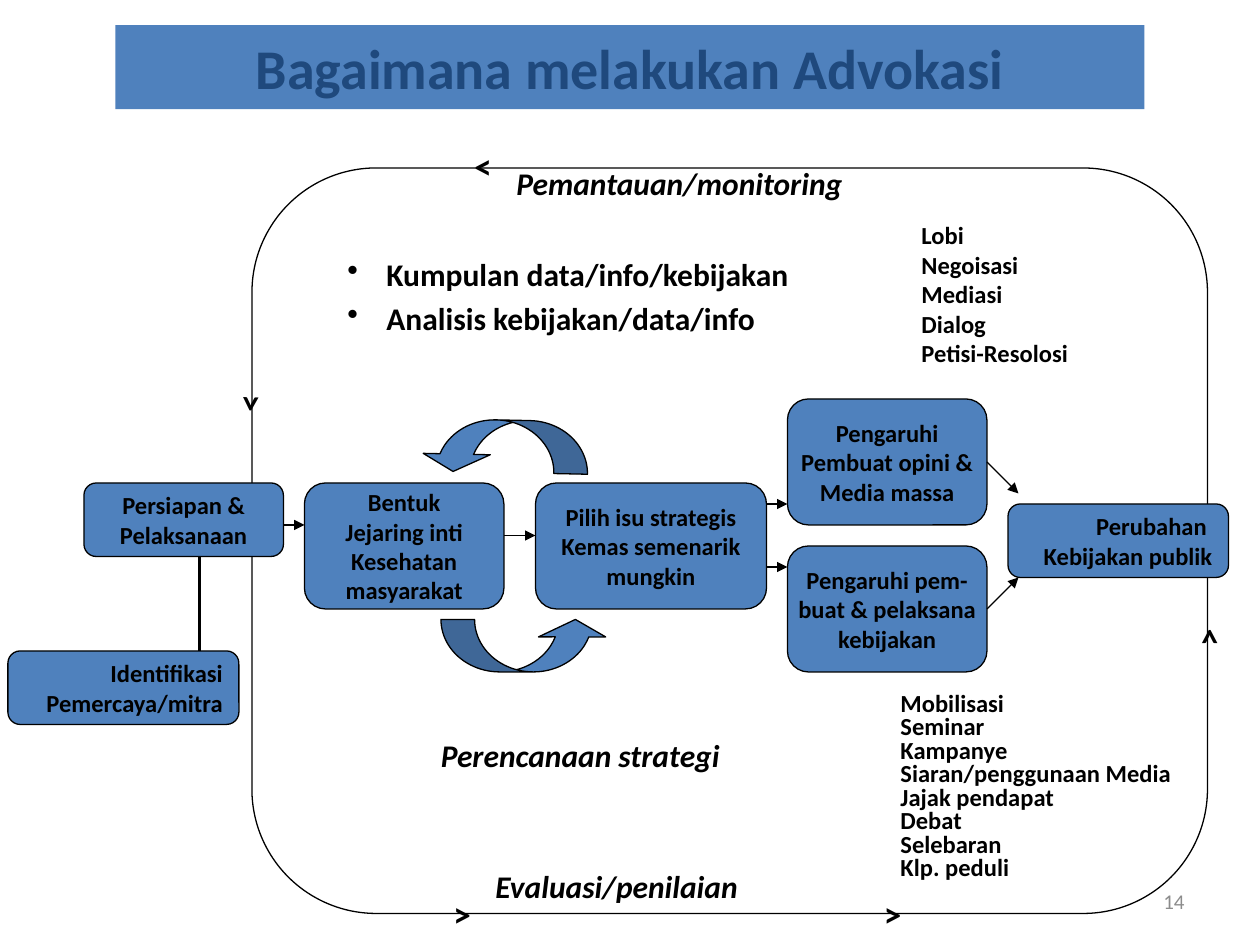
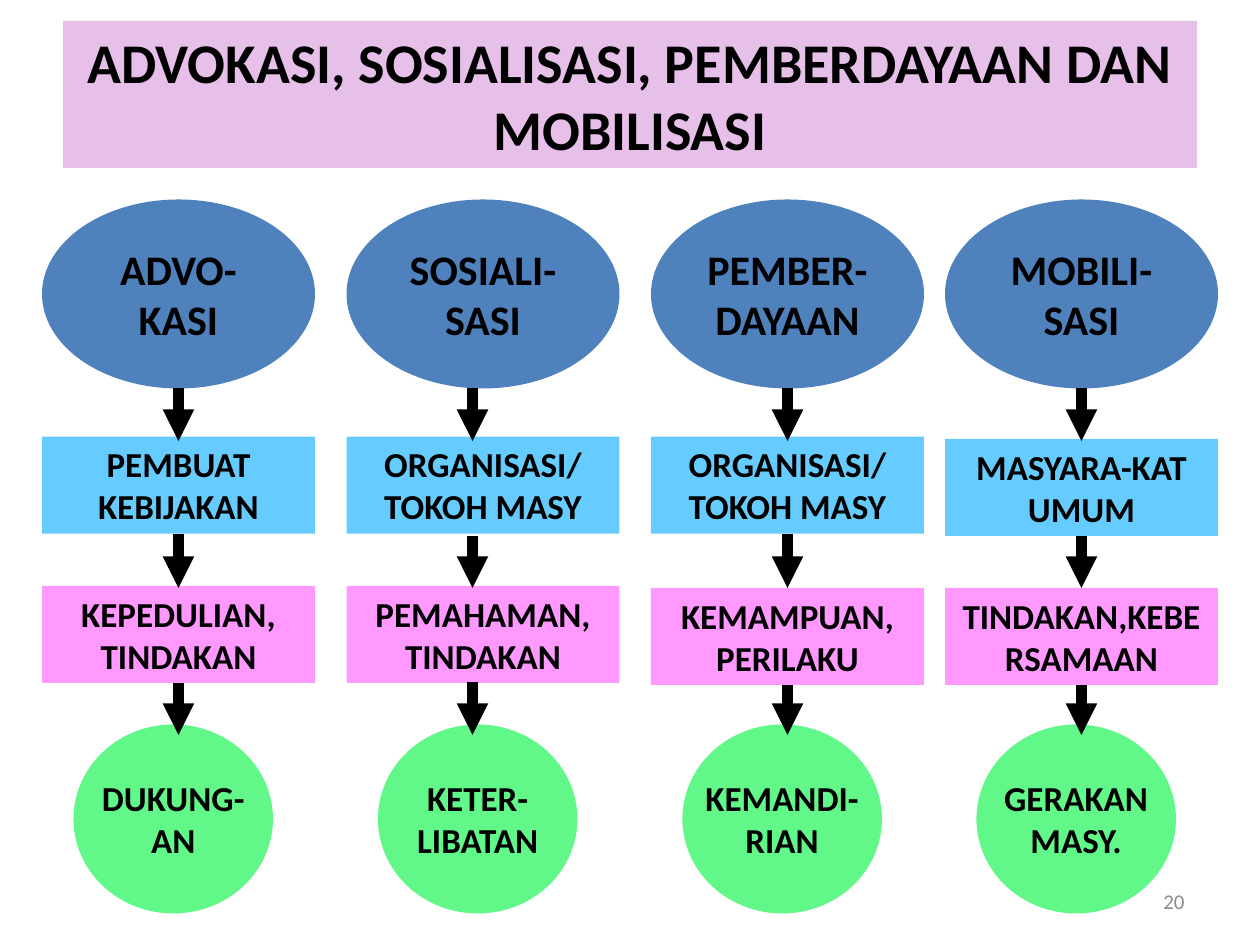
from lxml import etree
from pptx import Presentation, util as u
from pptx.dml.color import RGBColor
from pptx.enum import shapes, text
from pptx.oxml.ns import qn

COLUMNS = 120  # square grid cells across the slide; 90 rows
FONT = "Calibri"
BLACK, WHITE, GREY, NAVY = "000000", "FFFFFF", "8C8C8C", "1F497D"
BLUE, SKY, PINK, GREEN, LILAC = "4F81BD", "66CCFF", "FF99FF", "62F889", "E6C0E8"

KIND = shapes.MSO_SHAPE
LEFT, CENTER, RIGHT = text.PP_ALIGN.LEFT, text.PP_ALIGN.CENTER, text.PP_ALIGN.RIGHT
TOP, MIDDLE = text.MSO_ANCHOR.TOP, text.MSO_ANCHOR.MIDDLE
RIGHT_SIDE, BOTTOM_SIDE = 3, 2


def rgb(code):
    return RGBColor.from_string(code)


class Deck:
    """Holds the style, the grid and the current slide."""

    def __init__(self):
        self.prs = Presentation()
        self.prs.slide_width, self.prs.slide_height = u.Inches(10), u.Inches(7.5)
        self.cell = self.prs.slide_width / COLUMNS
        self.slide = None

    def grid(self, *cells):
        return [round(c * self.cell) for c in cells]

    def new_slide(self, number):
        self.slide = self.prs.slides.add_slide(self.prs.slide_layouts[6])
        self.label((86, 83.4, 28, 4.8), str(number), 12, GREY, bold=False,
                   align=RIGHT, anchor=MIDDLE, wrap=True)

    def set_words(self, shape, words, size, color=BLACK, bold=True, italic=False,
                  align=CENTER, anchor=MIDDLE, wrap=False, spacing=None):
        frame = shape.text_frame
        frame.text = words
        frame.word_wrap, frame.vertical_anchor = wrap, anchor
        for line in frame.paragraphs:
            line.alignment, line.line_spacing = align, spacing
            font = line.font
            font.name, font.size, font.bold, font.italic = FONT, u.Pt(size), bold, italic
            font.color.rgb = rgb(color)

    def label(self, area, words, size, color=BLACK, turn=0, align=LEFT, anchor=TOP, **style):
        box = self.slide.shapes.add_textbox(*self.grid(*area))
        box.rotation = turn
        self.set_words(box, words, size, color, align=align, anchor=anchor, **style)

    def shape(self, kind, area, fill=None, outline=None, words="", size=14,
              adjust=(), turn=0, **style):
        item = self.slide.shapes.add_shape(kind, *self.grid(*area))
        item.shadow.inherit = False
        item.rotation = turn
        for i, value in enumerate(adjust):
            item.adjustments[i] = value
        if fill:
            item.fill.solid()
            item.fill.fore_color.rgb = rgb(fill)
        else:
            item.fill.background()
        if outline:
            item.line.color.rgb = rgb(outline)
            item.line.width = u.Pt(0.75)
        else:
            item.line.fill.background()
        if words:
            self.set_words(item, words, size, **style)
        return item

    def title(self, area, words, fill, color):
        self.shape(KIND.RECTANGLE, area, fill, words=words, size=32, color=color, wrap=True)

    def step(self, area, words, align=CENTER):
        return self.shape(KIND.ROUNDED_RECTANGLE, area, BLUE, BLACK, words, align=align)

    def bullets(self, shape, words, size, top):
        self.set_words(shape, words, size, align=LEFT, anchor=TOP, wrap=True)
        shape.text_frame.margin_top = u.Inches(top)
        for i, line in enumerate(shape.text_frame.paragraphs):
            line.space_before = u.Pt(0.2 * size if i else 0)
            props = line._p.get_or_add_pPr()
            props.set("marL", str(u.Inches(0.68)))
            props.set("indent", str(u.Inches(-0.31)))
            mark = etree.Element(qn("a:buChar"), char="•")
            props.find(qn("a:defRPr")).addprevious(mark)

    def line(self, start, end, width=0.75, arrow=True, source=None, side=RIGHT_SIDE):
        link = self.slide.shapes.add_connector(
            shapes.MSO_CONNECTOR.STRAIGHT, *self.grid(*start, *end))
        if source is not None:
            link.begin_connect(source, side)
        link.line.color.rgb = rgb(BLACK)
        link.line.width = u.Pt(width)
        if arrow:
            etree.SubElement(link.line._get_or_add_ln(), qn("a:tailEnd"), type="triangle")
        etree.SubElement(link._element.spPr, qn("a:effectLst"))


def advocacy_cycle(deck):
    deck.new_slide(14)

    # Monitoring loop with its data points
    loop = deck.shape(KIND.FLOWCHART_ALTERNATE_PROCESS, (24, 16, 91, 71), WHITE, BLACK)
    deck.bullets(loop, "Kumpulan data/info/kebijakan\nAnalisis kebijakan/data/info", 18, 0.4)
    deck.title((11, 2.4, 98, 8), "Bagaimana melakukan Advokasi", BLUE, NAVY)

    # Steps
    deck.step((8, 46, 19, 7), "Persiapan &\nPelaksanaan")
    deck.step((0.75, 62, 22, 7), "Identifikasi\nPemercaya/mitra", RIGHT)
    deck.step((29, 46, 19, 12), "Bentuk\nJejaring inti\nKesehatan\nmasyarakat")
    deck.step((51, 46, 22, 12), "Pilih isu strategis\nKemas semenarik\nmungkin")
    opinion = deck.step((75, 38, 19, 12), "Pengaruhi\nPembuat opini &\nMedia massa")
    policy = deck.step((75, 52, 19, 12), "Pengaruhi pem-\nbuat & pelaksana\nkebijakan")
    deck.step((96, 48, 21, 7), "Perubahan \nKebijakan publik", RIGHT)

    # Methods above and below the steps
    deck.shape(KIND.ROUNDED_RECTANGLE, (86, 22, 19, 12), align=LEFT,
               words="Lobi\nNegoisasi\nMediasi\nDialog\nPetisi-Resolosi")
    deck.shape(KIND.ROUNDED_RECTANGLE, (84, 69, 19, 12), align=LEFT, spacing=0.8,
               words="Mobilisasi\nSeminar\nKampanye\nSiaran/penggunaan Media\n"
                     "Jajak pendapat\nDebat\nSelebaran\nKlp. peduli")

    # Phases
    for area, phase in (((40.8, 69.5, 32.8, 4.8), "Perencanaan strategi"),
                        ((46, 82, 28.4, 4.8), "Evaluasi/penilaian"),
                        ((48, 15, 36.7, 4.8), "Pemantauan/monitoring")):
        deck.label(area, phase, 18, italic=True)

    # Direction marks on the loop
    for x, y, mark, turn in ((44, 13.2, "<", 0), (83, 84.4, ">", 0), (42, 84.4, ">", 0),
                             (112.8, 58, ">", 270), (22, 36, ">", 91.8)):
        deck.label((x, y, 4.3, 5.2), mark, 20, turn=turn)

    # Links between steps
    deck.line((19, 53), (19, 62), 1.5, arrow=False)
    for start, end, y in ((27, 29, 50), (48, 51, 51), (73, 75, 48), (73, 75, 54)):
        deck.line((start, y), (end, y))
    deck.line((94, 58), (97, 55), source=policy)
    deck.line((94, 44), (97, 47), source=opinion)
    for x, y, turn in ((42, 59, 0), (40, 40, 181.2)):
        deck.shape(KIND.CURVED_UP_ARROW, (x, y, 16, 5), BLUE, BLACK,
                   adjust=(0.64, 1.28, 0.333), turn=turn)


def four_approaches(deck):
    deck.new_slide(20)
    deck.title((6, 2, 108, 14), "ADVOKASI, SOSIALISASI, PEMBERDAYAAN DAN MOBILISASI",
               LILAC, BLACK)

    # left, arrow x, audience top, effect top, then the words from top to bottom
    approaches = (
        (4, 17, 41.6, 55.8, "ADVO-\nKASI", "PEMBUAT KEBIJAKAN",
         "KEPEDULIAN, TINDAKAN", "DUKUNG-\nAN"),
        (33, 45, 41.6, 55.8, "SOSIALI-\nSASI", "ORGANISASI/ TOKOH MASY",
         "PEMAHAMAN, TINDAKAN", "KETER-\nLIBATAN"),
        (62, 75, 41.6, 56, "PEMBER-\nDAYAAN", "ORGANISASI/ TOKOH MASY",
         "KEMAMPUAN, PERILAKU", "KEMANDI-\nRIAN"),
        (90, 103, 41.8, 56, "MOBILI-\nSASI", "MASYARA-KAT UMUM",
         "TINDAKAN,KEBERSAMAAN", "GERAKAN\nMASY."),
    )
    width, height = 26, 9.24
    for left, axis, audience_top, effect_top, name, audience, effect, result in approaches:
        # Approach, audience, effect, result
        deck.shape(KIND.OVAL, (left, 19, width, 18), BLUE, words=name, size=24)
        audience_box, effect_box = (
            deck.shape(KIND.RECTANGLE, (left, top, width, height), fill, words=words,
                       size=20, anchor=TOP, wrap=True)
            for top, fill, words in ((audience_top, SKY, audience), (effect_top, PINK, effect)))
        deck.shape(KIND.OVAL, (left + 3, 69, 19, 18), GREEN, words=result, size=20)

        # Arrows down the column, joined where they leave a box at its middle
        centred = axis == left + width / 2
        for top, box in ((37, None), (51, audience_box), (65, effect_box)):
            deck.line((axis, top), (axis, top + 5), 6,
                      source=box if centred else None, side=BOTTOM_SIDE)


def main():
    deck = Deck()
    advocacy_cycle(deck)
    four_approaches(deck)
    deck.prs.save("out.pptx")


if __name__ == "__main__":
    main()
